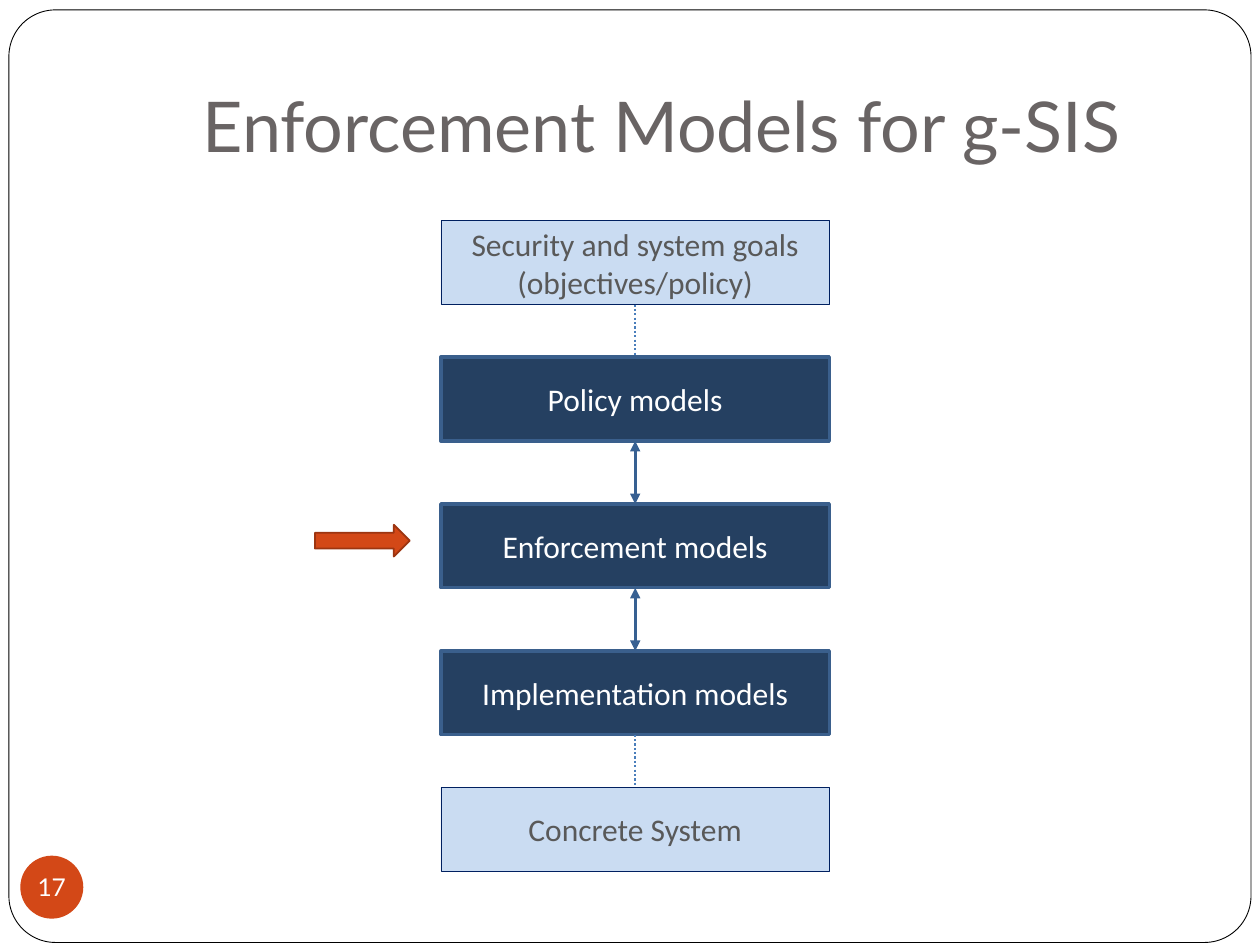
from lxml.etree import SubElement
from pptx import Presentation
from pptx.dml.color import RGBColor
from pptx.enum.dml import MSO_LINE
from pptx.enum.shapes import MSO_CONNECTOR, MSO_SHAPE
from pptx.enum.text import MSO_ANCHOR, PP_ALIGN
from pptx.oxml.ns import qn
from pptx.util import Cm, Pt

WHITE = RGBColor(0xFF, 0xFF, 0xFF)
BLACK = RGBColor(0x00, 0x00, 0x00)
GRAY = RGBColor(0x69, 0x64, 0x64)
DARK_GRAY = RGBColor(0x59, 0x59, 0x59)
ORANGE = RGBColor(0xD3, 0x48, 0x17)
RUST = RGBColor(0x9C, 0x35, 0x11)
PALE_BLUE = RGBColor(0xCA, 0xDC, 0xF2)
INDIGO = RGBColor(0x00, 0x20, 0x60)
NAVY = RGBColor(0x25, 0x40, 0x61)
STEEL = RGBColor(0x3A, 0x5F, 0x8C)
ARROW_BLUE = RGBColor(0x37, 0x60, 0x92)
DOT_BLUE = RGBColor(0x4A, 0x7E, 0xBB)

TITLE = "Enforcement Models for g-SIS"
PAGE = "17"
STYLES = {
    "outer": (PALE_BLUE, INDIGO, 0.25, DARK_GRAY),
    "model": (NAVY, STEEL, 2, WHITE),
}
LAYERS = [
    ("outer", ["Security and system goals", "(objectives/policy)"]),
    ("model", ["Policy models"]),
    ("model", ["Enforcement models"]),
    ("model", ["Implementation models"]),
    ("outer", ["Concrete System"]),
]
LEFT, TOP, WIDTH, HEIGHT = 8.89, 4.45, 7.83, 1.69
MODEL_GAP, OUTER_GAP = 1.27, 1.06


def add_shape(s, kind, box, fill, line=None, weight=0):
    sp = s.shapes.add_shape(kind, *map(Cm, box))
    sp.shadow.inherit = False
    sp.fill.solid()
    sp.fill.fore_color.rgb = fill
    if line is None:
        sp.line.fill.background()
    else:
        sp.line.color.rgb = line
        sp.line.width = Pt(weight)
    return sp


def set_text(sp, lines, font, size, color, anchor=MSO_ANCHOR.MIDDLE):
    tf = sp.text_frame
    tf.word_wrap = True
    tf.vertical_anchor = anchor
    for i, text in enumerate(lines):
        p = tf.add_paragraph() if i else tf.paragraphs[0]
        p.text = text
        p.alignment = PP_ALIGN.CENTER
        p.font.name = font
        p.font.size = Pt(size)
        p.font.color.rgb = color
    return tf


def add_link(s, x, y1, y2, dotted):
    cn = s.shapes.add_connector(MSO_CONNECTOR.STRAIGHT, Cm(x), Cm(y1), Cm(x), Cm(y2))
    cn.line.color.rgb = DOT_BLUE if dotted else ARROW_BLUE
    cn.line.width = Pt(1.25 if dotted else 1.75)
    if dotted:
        cn.line.dash_style = MSO_LINE.ROUND_DOT
    else:
        ln = cn.line._get_or_add_ln()
        for end in ("a:headEnd", "a:tailEnd"):
            SubElement(ln, qn(end), type="triangle")
    SubElement(cn._element.spPr, qn("a:effectLst"))


def main():
    prs = Presentation()
    prs.slide_width, prs.slide_height = Cm(25.4), Cm(19.05)
    s = prs.slides.add_slide(prs.slide_layouts[6])

    frame = add_shape(s, MSO_SHAPE.ROUNDED_RECTANGLE, (0.18, 0.2, 25.04, 18.8), WHITE, BLACK, 0.5)
    frame.adjustments[0] = 0.05

    title = s.shapes.add_textbox(Cm(2.54), Cm(0.43), Cm(21.59), Cm(3.18))
    tf = set_text(title, [TITLE], "Lato", 40, GRAY, MSO_ANCHOR.BOTTOM)
    tf.margin_bottom = Cm(0.25)

    badge = add_shape(s, MSO_SHAPE.OVAL, (0.41, 17.25, 1.27, 1.27), ORANGE)
    tf = set_text(badge, [PAGE], "Lato", 14, WHITE)
    tf.word_wrap = False
    tf.margin_left = tf.margin_right = tf.margin_top = tf.margin_bottom = 0

    y = TOP
    previous = None
    for style, lines in LAYERS:
        if previous:
            dotted = "outer" in (previous, style)
            gap = OUTER_GAP if dotted else MODEL_GAP
            add_link(s, LEFT + WIDTH / 2, y, y + gap, dotted)
            y += gap
        fill, line, weight, color = STYLES[style]
        sp = add_shape(s, MSO_SHAPE.RECTANGLE, (LEFT, y, WIDTH, HEIGHT), fill, line, weight)
        set_text(sp, lines, "Calibri", 18, color)
        y += HEIGHT
        previous = style

    add_shape(s, MSO_SHAPE.RIGHT_ARROW, (6.35, 10.58, 1.91, 0.64), ORANGE, RUST, 1)
    prs.save("out.pptx")


if __name__ == "__main__":
    main()
